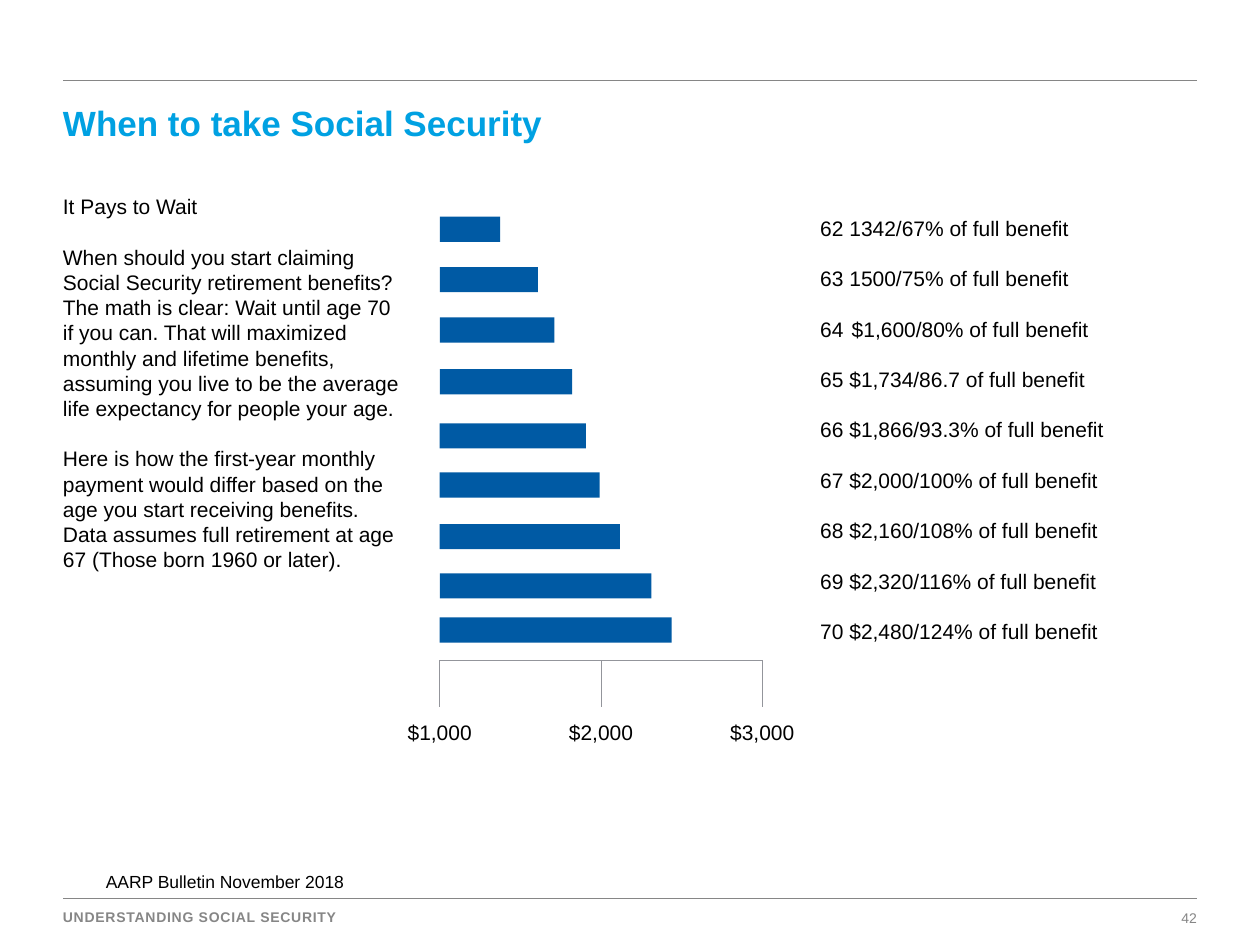
from lxml import etree
from pptx import Presentation
from pptx.dml.color import RGBColor
from pptx.enum.shapes import MSO_CONNECTOR, MSO_SHAPE
from pptx.enum.text import MSO_ANCHOR, PP_ALIGN
from pptx.oxml.ns import qn
from pptx.util import Inches, Pt

STRAIGHT, RECTANGLE = MSO_CONNECTOR.STRAIGHT, MSO_SHAPE.RECTANGLE
TOP, BOTTOM = MSO_ANCHOR.TOP, MSO_ANCHOR.BOTTOM
LEFT, CENTER, RIGHT = PP_ALIGN.LEFT, PP_ALIGN.CENTER, PP_ALIGN.RIGHT

# Content
TITLE = "When to take Social Security"
SOURCE = "AARP Bulletin November 2018"
FOOTER, PAGE = "UNDERSTANDING SOCIAL SECURITY", "42"
ADVICE = [
    "It Pays to Wait",
    "When should you start claiming Social Security retirement benefits? "
    "The math is clear: Wait until age 70 if you can. That will maximized "
    "monthly and lifetime benefits, assuming you live to be the average "
    "life expectancy for people your age.",
    "Here is how the first-year monthly payment would differ based on the "
    "age you start receiving benefits. Data assumes full retirement at age "
    "67 (Those born 1960 or later).",
]
NUMBERED_AGE = 64  # this age is an automatic list number
BENEFITS = [
    "62 1342/67% of full benefit",
    "63 1500/75% of full benefit",
    "$1,600/80% of full benefit",
    "65 $1,734/86.7 of full benefit",
    "66 $1,866/93.3% of full benefit",
    "67 $2,000/100% of full benefit",
    "68 $2,160/108% of full benefit",
    "69 $2,320/116% of full benefit",
    "70 $2,480/124% of full benefit",
]
FIRST_AGE = 62
# Top and length of each bar, ages 62 to 70
BARS = [(1.72, 0.48), (2.12, 0.78), (2.52, 0.91), (2.93, 1.05), (3.36, 1.16),
        (3.75, 1.27), (4.16, 1.43), (4.55, 1.68), (4.9, 1.84)]
AXIS_LABELS = ["$1,000", "$2,000", "$3,000"]

# Theme and grid
THEME = {
    "font": "Arial", "title": "00A1E2", "text": "000000", "muted": "868686",
    "axis": "93959B", "bar": "005AA4",
    "title_size": 20, "body_size": 12, "source_size": 10, "footer_size": 8,
}
WIDTH, HEIGHT, MARGIN = 10, 7.5, 0.5
CONTENT_WIDTH = WIDTH - 2 * MARGIN
LINE_PITCH = 14.4
AXIS_LEFT, AXIS_TOP, AXIS_STEP, TICK = 3.49, 5.24, 1.28, 0.37
BAR_HEIGHT, LABEL_WIDTH = 0.2, 0.7


def add_text(slide, box, texts, size, color="text", bold=False, align=LEFT,
             anchor=TOP, gap=0):
    frame = slide.shapes.add_textbox(*map(Inches, box)).text_frame
    frame.word_wrap = True
    frame.vertical_anchor = anchor
    frame.margin_left = frame.margin_right = 0
    frame.margin_top = frame.margin_bottom = 0
    for index, text in enumerate(texts):
        paragraph = frame.paragraphs[0] if index == 0 else frame.add_paragraph()
        paragraph.text = text
        paragraph.alignment = align
        if gap:
            paragraph.line_spacing = Pt(gap)
            paragraph.space_before = Pt(gap if index else 0)
        font = paragraph.font
        font.name, font.size, font.bold = THEME["font"], Pt(THEME[size]), bold
        font.color.rgb = RGBColor.from_string(THEME[color])
    return frame


def number_paragraph(paragraph, start):
    properties = paragraph._p.get_or_add_pPr()
    properties.set("marL", str(Inches(0.25)))
    properties.set("indent", str(-Inches(0.25)))
    number = etree.Element(qn("a:buAutoNum"), type="arabicPlain", startAt=str(start))
    properties.find(qn("a:defRPr")).addprevious(number)


def add_line(slide, x1, y1, x2, y2, color, width):
    line = slide.shapes.add_connector(STRAIGHT, *map(Inches, (x1, y1, x2, y2)))
    line.line.color.rgb = RGBColor.from_string(THEME[color])
    line.line.width = Pt(width)
    etree.SubElement(line._element.spPr, qn("a:effectLst"))


def main():
    presentation = Presentation()
    presentation.slide_width, presentation.slide_height = Inches(WIDTH), Inches(HEIGHT)
    slide = presentation.slides.add_slide(presentation.slide_layouts[6])

    # Rules, title and footer
    for y in (0.64, 7.13):
        add_line(slide, MARGIN, y, WIDTH - MARGIN, y, "muted", 1)
    add_text(slide, (MARGIN, 0.8, CONTENT_WIDTH, 0.34), [TITLE], "title_size",
             "title", bold=True, anchor=BOTTOM)
    add_text(slide, (0.84, 6.91, 2.2, 0.17), [SOURCE], "source_size")
    footer = add_text(slide, (MARGIN, 7.21, 3.1, 0.15), [FOOTER], "footer_size",
                      "muted", bold=True)
    footer.paragraphs[0].runs[0].font._element.set("spc", "40")
    add_text(slide, (9, 7.22, 0.5, 0.13), [PAGE], "footer_size", "muted", align=RIGHT)

    # Advice and benefit columns
    add_text(slide, (MARGIN, 1.54, 2.7, 3.03), ADVICE, "body_size", gap=LINE_PITCH)
    benefits = add_text(slide, (6.51, 1.71, 2.98, 3.64), BENEFITS, "body_size",
                        gap=LINE_PITCH)
    number_paragraph(benefits.paragraphs[NUMBERED_AGE - FIRST_AGE], NUMBERED_AGE)

    # Axis with ticks and labels
    axis_right = AXIS_LEFT + AXIS_STEP * (len(AXIS_LABELS) - 1)
    add_line(slide, AXIS_LEFT, AXIS_TOP, axis_right, AXIS_TOP, "axis", 0.5)
    for index, label in enumerate(AXIS_LABELS):
        x = AXIS_LEFT + index * AXIS_STEP
        add_line(slide, x, AXIS_TOP, x, AXIS_TOP + TICK, "axis", 0.5)
        add_text(slide, (x - LABEL_WIDTH / 2, 5.71, LABEL_WIDTH, 0.2), [label],
                 "body_size", align=CENTER)

    # Bars
    for top, length in BARS:
        bar = slide.shapes.add_shape(
            RECTANGLE, *map(Inches, (AXIS_LEFT, top, length, BAR_HEIGHT)))
        bar.shadow.inherit = False
        bar.fill.solid()
        bar.fill.fore_color.rgb = RGBColor.from_string(THEME["bar"])
        bar.line.fill.background()

    presentation.save("out.pptx")


if __name__ == "__main__":
    main()
